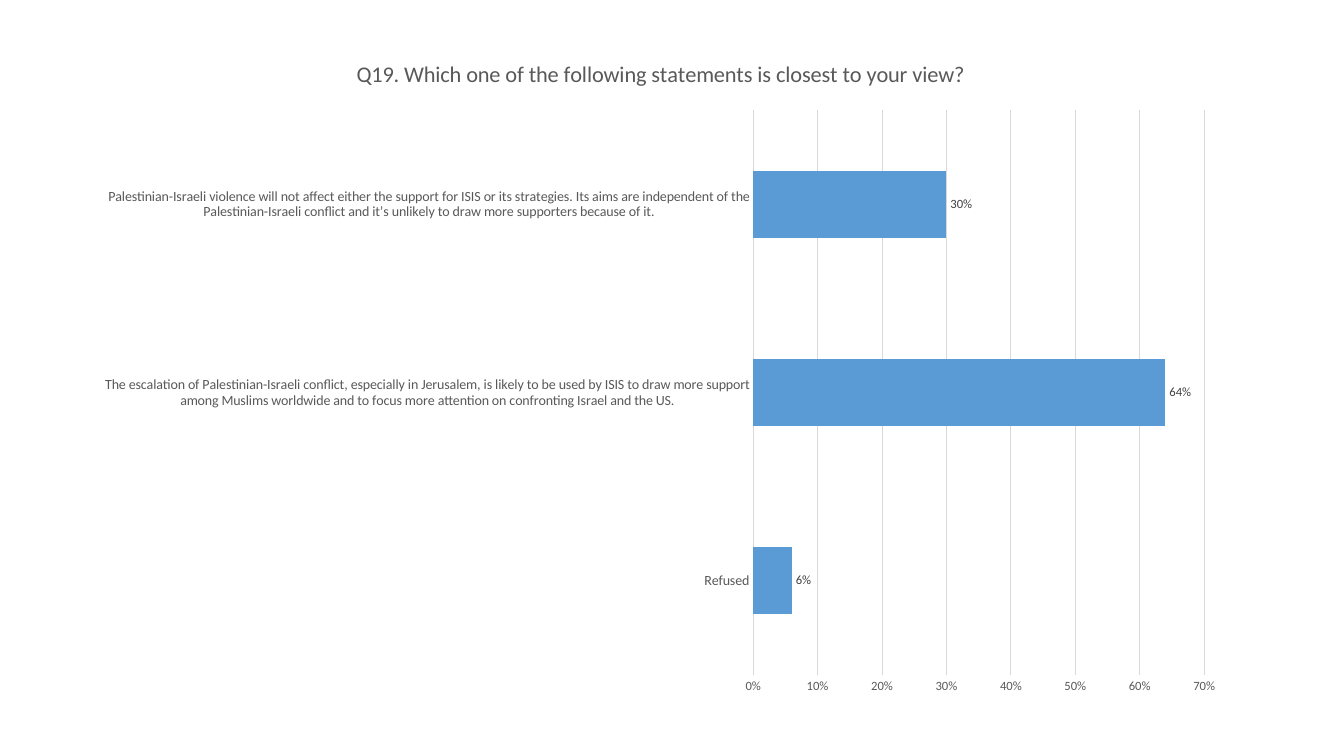
from lxml import etree
from pptx import Presentation
from pptx.chart.data import CategoryChartData
from pptx.dml.color import RGBColor
from pptx.enum.chart import XL_CHART_TYPE, XL_LABEL_POSITION, XL_TICK_MARK
from pptx.oxml.ns import qn
from pptx.util import Pt

TITLE = "Q19. Which one of the following statements is closest to your view?"
ANSWERS = [
    ("Refused", 0.06),
    ("The escalation of Palestinian-Israeli conflict, especially in Jerusalem, "
     "is likely to be used by ISIS to draw more support among Muslims worldwide "
     "and to focus more attention on confronting Israel and the US.", 0.64),
    ("Palestinian-Israeli violence will not affect either the support for ISIS "
     "or its strategies. Its aims are independent of the Palestinian-Israeli "
     "conflict and it’s unlikely to draw more supporters because of it.", 0.30),
]
TEXT, LABEL, RULE, BAR = "595959", "404040", "D9D9D9", "5B9BD5"


def color(value):
    return RGBColor.from_string(value)


def style_font(font, size, value):
    font.name = "Calibri"
    font.size = Pt(size)
    font.bold = False
    font.color.rgb = color(value)


def style_line(line, value):
    line.color.rgb = color(value)
    line.width = Pt(0.75)


def place_plot(chart, **fractions):
    """Fix the inner plot area as fractions of the chart."""
    plot_area = chart.element.find(".//" + qn("c:plotArea"))
    for old in plot_area.findall(qn("c:layout")):
        plot_area.remove(old)
    layout = etree.Element(qn("c:layout"))
    plot_area.insert(0, layout)
    manual = etree.SubElement(layout, qn("c:manualLayout"))
    settings = {"layoutTarget": "inner", "xMode": "edge", "yMode": "edge", **fractions}
    for name, value in settings.items():
        etree.SubElement(manual, qn("c:" + name)).set("val", str(value))


def add_title(chart):
    chart.has_title = True
    frame = chart.chart_title.text_frame
    span = frame.paragraphs[0].add_run()
    span.text = TITLE
    style_font(span.font, 16, TEXT)
    chart.chart_title.include_in_layout = False


def style_axes(chart):
    answers, shares = chart.category_axis, chart.value_axis
    for axis, size in ((answers, 10), (shares, 9)):
        axis.major_tick_mark = axis.minor_tick_mark = XL_TICK_MARK.NONE
        style_font(axis.tick_labels.font, size, TEXT)
    answers.has_major_gridlines = False
    style_line(answers.format.line, RULE)
    shares.minimum_scale, shares.maximum_scale, shares.major_unit = 0, 0.7, 0.1
    shares.tick_labels.number_format = "0%"
    shares.tick_labels.number_format_is_linked = False
    shares.format.line.fill.background()
    shares.has_major_gridlines = True
    style_line(shares.major_gridlines.format.line, RULE)


def style_bars(plot):
    plot.gap_width = 182
    plot.vary_by_categories = False
    series = plot.series[0]
    series.format.fill.solid()
    series.format.fill.fore_color.rgb = color(BAR)
    labels = series.data_labels
    labels.show_value = True
    labels.number_format = "0%"
    labels.number_format_is_linked = False
    labels.position = XL_LABEL_POSITION.OUTSIDE_END
    style_font(labels.font, 9, LABEL)


def add_answer_chart(page, left, top, width, height):
    answers = CategoryChartData(number_format="0%")
    answers.categories = [answer for answer, share in ANSWERS]
    answers.add_series("Series 1", [share for answer, share in ANSWERS])
    chart = page.shapes.add_chart(
        XL_CHART_TYPE.BAR_CLUSTERED, Pt(left), Pt(top), Pt(width), Pt(height), answers
    ).chart
    style_font(chart.font, 10, "000000")
    chart.has_legend = False
    add_title(chart)
    style_axes(chart)
    style_bars(chart.plots[0])
    place_plot(chart, x=0.58, y=0.11, w=0.39, h=0.84)


def main():
    deck = Presentation()
    deck.slide_width, deck.slide_height = Pt(960), Pt(540)
    page = deck.slides.add_slide(deck.slide_layouts[6])
    add_answer_chart(page, 59, 26, 826, 480)
    deck.save("out.pptx")


if __name__ == "__main__":
    main()
